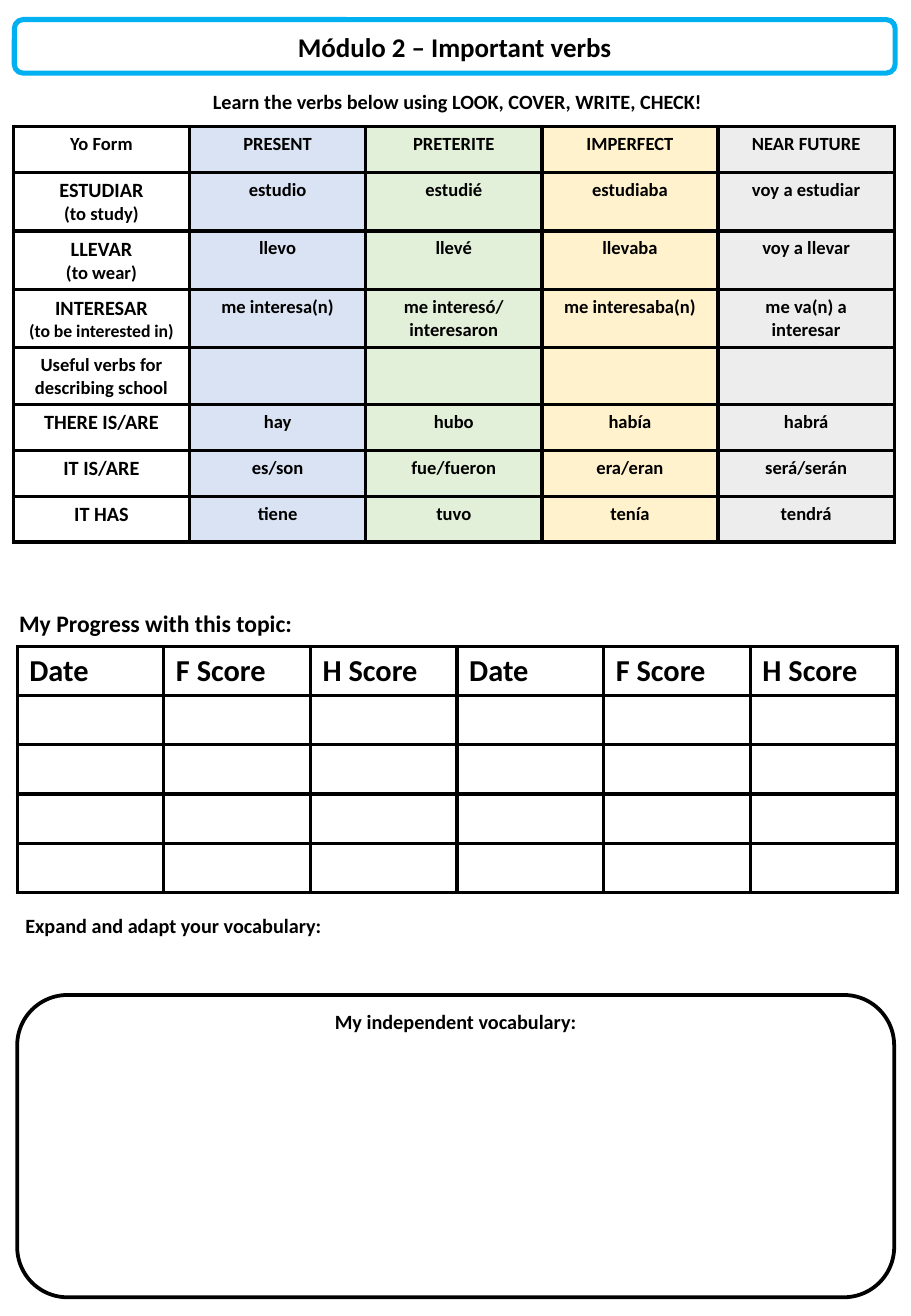
"""Build a one-page Spanish verb sheet with a progress log and vocabulary space."""
import pptx
import pptx.dml.color
import pptx.enum.shapes
import pptx.enum.text
import pptx.oxml
import pptx.oxml.ns
import pptx.util
from pptx.util import Cm

FONT = "Calibri"
BLACK, WHITE, TITLE_BLUE = "000000", "FFFFFF", "00B0F0"
CENTER = pptx.enum.text.PP_ALIGN.CENTER
LEFT = pptx.enum.text.PP_ALIGN.LEFT
ROUNDED = pptx.enum.shapes.MSO_SHAPE.ROUNDED_RECTANGLE
BORDER_WIDTH = 2.25

TITLE = "Módulo 2 – Important verbs"
TENSE_FILLS = [WHITE, "DAE3F3", "E2F0D9", "FFF2CC", "EDEDED"]
VERB_ROWS = [
    ["Yo Form", "PRESENT", "PRETERITE", "IMPERFECT", "NEAR FUTURE"],
    ["ESTUDIAR\n(to study)", "estudio", "estudié", "estudiaba", "voy a estudiar"],
    ["LLEVAR\n(to wear)", "llevo", "llevé", "llevaba", "voy a llevar"],
    ["INTERESAR\n(to be interested in)", "me interesa(n)", "me interesó/\ninteresaron",
     "me interesaba(n)", "me va(n) a interesar"],
    ["Useful verbs for describing school", "", "", "", ""],
    ["THERE IS/ARE", "hay", "hubo", "había", "habrá"],
    ["IT IS/ARE", "es/son", "fue/fueron", "era/eran", "será/serán"],
    ["IT HAS", "tiene", "tuvo", "tenía", "tendrá"],
]
VERB_TEXT_SIZE = 11
VERB_NAME_SIZE = 12
LONG_MEANING = "(to be interested in)"
LONG_MEANING_SIZE = 10.5

PROGRESS_ROWS = [["Date", "F Score", "H Score"] * 2] + [[""] * 6] * 4
HEADINGS = [
    ("Learn the verbs below using LOOK, COVER, WRITE, CHECK!", 12, CENTER, (0.36, 1.75, 18.42, 0.77)),
    ("My Progress with this topic:", 14, LEFT, (0.15, 12.6, 9.96, 0.86)),
    ("Expand and adapt your vocabulary:", 12, LEFT, (0.28, 18.97, 15.47, 0.77)),
]
VOCABULARY_HEADING = "My independent vocabulary:"
TITLE_BOX = (0.3, 0.41, 18.42, 1.12)
VERB_BOX = (0.28, 2.64, 18.42, 7.72)
PROGRESS_BOX = (0.36, 13.51, 18.4, 5.15)
VOCABULARY_BOX = (0.36, 20.8, 18.34, 6.32)


def color(value):
    return pptx.dml.color.RGBColor.from_string(value)


def lengths(box):
    return [Cm(value) for value in box]


def style(paragraph, size, alignment):
    paragraph.alignment = alignment
    font = paragraph.font
    font.name, font.size, font.bold = FONT, pptx.util.Pt(size), True
    font.color.rgb = color(BLACK)


def add_frame(slide, box, line_color, line_width):
    frame = slide.shapes.add_shape(ROUNDED, *lengths(box))
    frame.shadow.inherit = False
    frame.line.color.rgb = color(line_color)
    frame.line.width = pptx.util.Pt(line_width)
    return frame


def add_borders(cell):
    properties = cell._tc.get_or_add_tcPr()
    for position, side in enumerate(("lnL", "lnR", "lnT", "lnB")):
        properties.insert(position, pptx.oxml.parse_xml(
            f'<a:{side} {pptx.oxml.ns.nsdecls("a")} w="{pptx.util.Pt(BORDER_WIDTH)}">'
            f'<a:solidFill><a:srgbClr val="{BLACK}"/></a:solidFill></a:{side}>'))


def add_grid(slide, rows, box, fills, alignment, size_of):
    grid = slide.shapes.add_table(len(rows), len(rows[0]), *lengths(box)).table
    grid.first_row = grid.horz_banding = False
    for row_index, texts in enumerate(rows):
        grid.rows[row_index].height = Cm(box[3] / len(rows))
        for column_index, text in enumerate(texts):
            cell = grid.cell(row_index, column_index)
            cell.fill.solid()
            cell.fill.fore_color.rgb = color(fills[column_index])
            add_borders(cell)
            if text:
                cell.text = text
                for paragraph in cell.text_frame.paragraphs:
                    style(paragraph, size_of(column_index, paragraph.text), alignment)


def verb_size(column_index, text):
    if text == LONG_MEANING:
        return LONG_MEANING_SIZE
    return VERB_NAME_SIZE if column_index == 0 and text.isupper() else VERB_TEXT_SIZE


def progress_size(column_index, text):
    return 18


def main():
    presentation = pptx.Presentation()
    presentation.slide_width, presentation.slide_height = Cm(19.05), Cm(27.51)
    slide = presentation.slides.add_slide(presentation.slide_layouts[5])

    title_frame = add_frame(slide, TITLE_BOX, TITLE_BLUE, 3)
    title_frame.fill.solid()
    title_frame.fill.fore_color.rgb = color(WHITE)
    title = slide.shapes.title
    title._element.addprevious(title_frame._element)
    title.left, title.top, title.width, title.height = lengths(TITLE_BOX)
    title.text = TITLE
    title.text_frame.vertical_anchor = pptx.enum.text.MSO_ANCHOR.MIDDLE
    style(title.text_frame.paragraphs[0], 16, CENTER)

    for text, size, alignment, box in HEADINGS:
        heading = slide.shapes.add_textbox(*lengths(box)).text_frame
        heading.word_wrap = True
        heading.text = text
        style(heading.paragraphs[0], size, alignment)

    verb_box = VERB_BOX[:3] + (0.96 * len(VERB_ROWS),)
    add_grid(slide, VERB_ROWS, verb_box, TENSE_FILLS, CENTER, verb_size)
    add_grid(slide, PROGRESS_ROWS, PROGRESS_BOX, [WHITE] * 6, LEFT, progress_size)

    vocabulary = add_frame(slide, VOCABULARY_BOX, BLACK, BORDER_WIDTH)
    vocabulary.fill.background()
    vocabulary.text_frame.vertical_anchor = pptx.enum.text.MSO_ANCHOR.TOP
    vocabulary.text_frame.margin_top = 0
    vocabulary.text_frame.text = VOCABULARY_HEADING
    style(vocabulary.text_frame.paragraphs[0], 12, CENTER)

    presentation.save("out.pptx")


if __name__ == "__main__":
    main()
